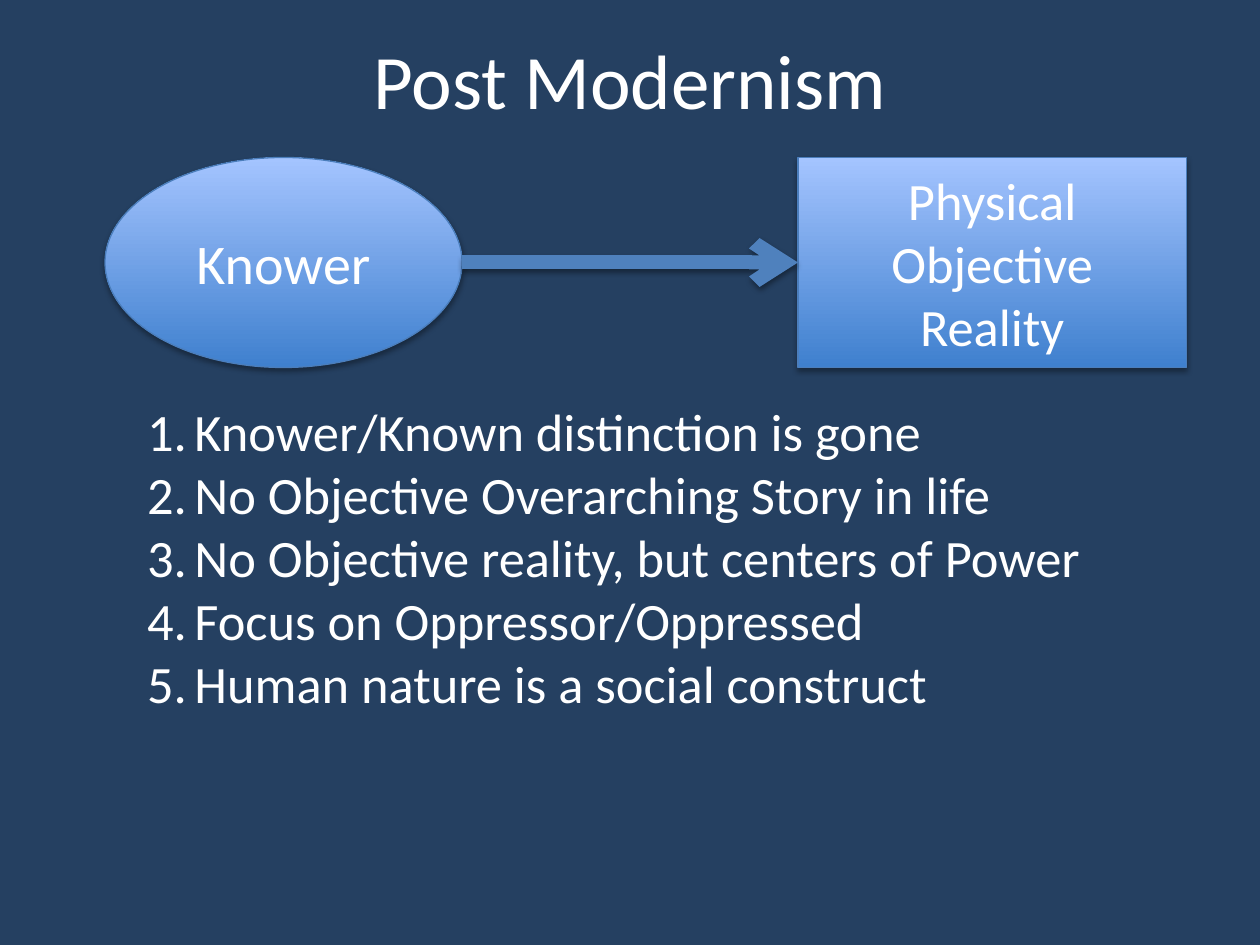
"""Build the Post Modernism slide: knower, reality and five numbered claims."""
from dataclasses import dataclass

from pptx import Presentation
from pptx.dml.color import RGBColor as Rgb
from pptx.enum.shapes import MSO_CONNECTOR as Connector, MSO_SHAPE as Shape
from pptx.enum.text import MSO_ANCHOR as Anchor, MSO_AUTO_SIZE as AutoSize, PP_ALIGN as Align
from pptx.oxml.ns import qn
from pptx.util import Pt
from lxml.etree import SubElement


@dataclass(frozen=True)
class Theme:
    font: str = "Calibri"
    background: str = "254061"
    text: str = "FFFFFF"
    gradient: tuple = ("3F80CE", "A4C4FF")
    outline: str = "4B7EBC"
    arrow: str = "4F81BD"
    shadow: str = "000000"
    title_size: int = 44
    knower_size: int = 32
    body_size: int = 30


THEME = Theme()
CLAIMS = [
    "Knower/Known distinction is gone",
    "No Objective Overarching Story in life",
    "No Objective reality, but centers of Power",
    "Focus on Oppressor/Oppressed",
    "Human nature is a social construct",
]


def write(frame, *lines, size, align=Align.CENTER, anchor=Anchor.MIDDLE, wrap=True, numbered=False):
    frame.word_wrap = wrap
    frame.vertical_anchor = anchor
    for index, line in enumerate(lines):
        paragraph = frame.add_paragraph() if index else frame.paragraphs[0]
        paragraph.alignment = align
        run = paragraph.add_run()
        run.text = line
        run.font.name = THEME.font
        run.font.size = Pt(size)
        run.font.color.rgb = Rgb.from_string(THEME.text)
        if numbered:
            number_paragraph(paragraph)


def number_paragraph(paragraph, indent=27):
    properties = paragraph._p.get_or_add_pPr()
    properties.set("marL", str(Pt(indent)))
    properties.set("indent", str(-Pt(indent)))
    SubElement(properties, qn("a:buFont"), typeface="+mj-lt")
    SubElement(properties, qn("a:buAutoNum"), type="arabicPeriod")


def add_shadow(element, distance, opacity):
    effects = SubElement(element._element.spPr, qn("a:effectLst"))
    shadow = SubElement(effects, qn("a:outerShdw"), blurRad=str(Pt(3.1)), dist=str(Pt(distance)),
                        dir="5400000", rotWithShape="0")
    color = SubElement(shadow, qn("a:srgbClr"), val=THEME.shadow)
    SubElement(color, qn("a:alpha"), val=str(opacity * 1000))


def add_box(slide, left, top, width, height):
    return slide.shapes.add_textbox(Pt(left), Pt(top), Pt(width), Pt(height)).text_frame


def add_node(slide, kind, left, width, *lines, size, top=90, height=120):
    node = slide.shapes.add_shape(kind, Pt(left), Pt(top), Pt(width), Pt(height))
    node.fill.gradient()
    node.fill.gradient_angle = 90
    for position, (stop, color) in enumerate(zip(node.fill.gradient_stops, THEME.gradient)):
        stop.position = position
        stop.color.rgb = Rgb.from_string(color)
    node.line.color.rgb = Rgb.from_string(THEME.outline)
    node.line.width = Pt(0.75)
    add_shadow(node, distance=1.8, opacity=35)
    write(node.text_frame, *lines, size=size)
    return node


def add_arrow(slide, source, target):
    middle = source.top + source.height // 2
    arrow = slide.shapes.add_connector(
        Connector.STRAIGHT, source.left + source.width, middle, target.left, middle)
    arrow.end_connect(target, 1)
    arrow.line.color.rgb = Rgb.from_string(THEME.arrow)
    arrow.line.width = Pt(8)
    SubElement(arrow.line._get_or_add_ln(), qn("a:tailEnd"), type="arrow")
    add_shadow(arrow, distance=1.6, opacity=38)


def main():
    deck = Presentation()
    deck.slide_width, deck.slide_height = Pt(720), Pt(540)
    slide = deck.slides.add_slide(deck.slide_layouts[6])
    slide.background.fill.solid()
    slide.background.fill.fore_color.rgb = Rgb.from_string(THEME.background)

    write(add_box(slide, 36, 0, 648, 90), "Post Modernism", size=THEME.title_size)
    claims = add_box(slide, 77, 224.6, 553, 189.4)
    write(claims, *CLAIMS, size=THEME.body_size, align=Align.LEFT, anchor=Anchor.TOP,
          wrap=False, numbered=True)
    claims.auto_size = AutoSize.SHAPE_TO_FIT_TEXT

    knower = add_node(slide, Shape.OVAL, 60, 204, "Knower", size=THEME.knower_size)
    reality = add_node(slide, Shape.RECTANGLE, 456, 222, "Physical", "Objective", "Reality",
                       size=THEME.body_size)
    add_arrow(slide, knower, reality)
    deck.save("out.pptx")


if __name__ == "__main__":
    main()
